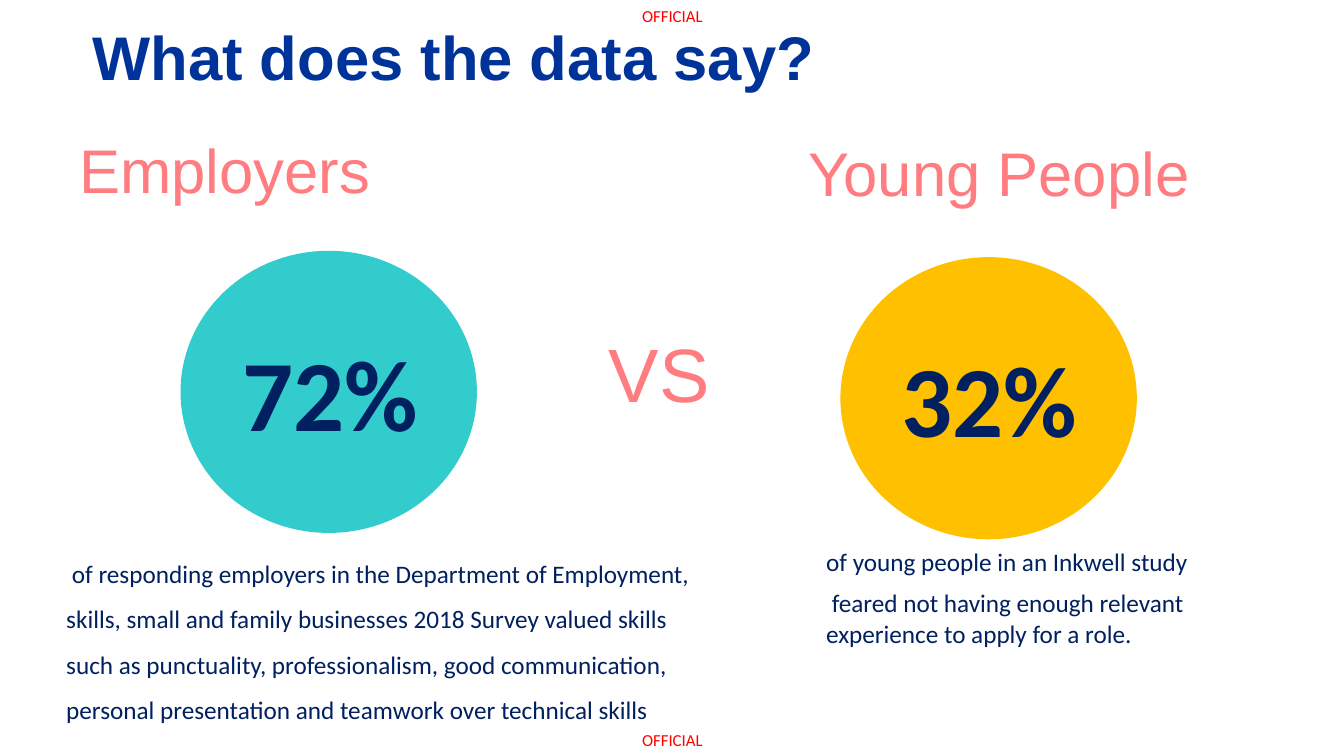
from pptx import Presentation
from pptx.dml.color import RGBColor
from pptx.enum.shapes import MSO_SHAPE
from pptx.enum.text import MSO_ANCHOR, MSO_AUTO_SIZE, PP_ALIGN
from pptx.util import Cm, Pt

# Content: places are left, top, width, height in cm
MARKING = "OFFICIAL"
MARKING_TOPS = [18.24, 0]
TEXTS = [
    (["What does the data say?"], (2.08, 0.56, 29.21, 1.96), "title"),
    (["Employers"], (1.75, 3.4, 8.43, 1.96), "heading"),
    (["Young People"], (20.12, 3.48, 11.43, 1.96), "heading"),
    (["VS"], (15.09, 8.36, 3.99, 2.34), "versus"),
    ([" of responding employers in the Department of Employment, skills, "
      "small and family businesses 2018 Survey valued skills such as "
      "punctuality, professionalism, good communication, personal "
      "presentation and teamwork over technical skills"],
     (1.42, 13.56, 16.94, 4.75), "open body"),
    (["of young people in an Inkwell study",
      " feared not having enough relevant experience to apply for a role."],
     (20.57, 13.64, 11.86, 2.84), "body"),
]
# Percentage, circle left, circle top, circle colour
CIRCLES = [("72%", 4.55, 6.32, "33CCCC"), ("32%", 21.18, 6.48, "FFC000")]

# Styles: font values, colour, paragraph values
NAVY, CORAL = "002060", "FF7C80"
STYLES = {
    "marking": ({"name": "Calibri", "size": Pt(12)}, "FF0000",
                {"alignment": PP_ALIGN.CENTER}),
    "title": ({"name": "Arial", "size": Pt(44), "bold": True}, "003399",
              {"line_spacing": 0.9}),
    "heading": ({"name": "Arial", "size": Pt(44)}, CORAL,
                {"line_spacing": 0.9}),
    "versus": ({"name": "Arial", "size": Pt(54)}, CORAL,
               {"line_spacing": 0.9}),
    "percent": ({"name": "Calibri", "size": Pt(72), "bold": True}, NAVY, {}),
    "open body": ({"name": "Calibri", "size": Pt(18)}, NAVY,
                  {"line_spacing": 1.5, "space_after": Pt(8)}),
    "body": ({"name": "Calibri", "size": Pt(18)}, NAVY,
             {"space_after": Pt(8)}),
}
MARKING_FRAME = {"margin_left": 0, "margin_right": 0, "margin_top": 0,
                 "margin_bottom": 0, "vertical_anchor": MSO_ANCHOR.MIDDLE,
                 "word_wrap": False}


def color(hex_value):
    return RGBColor.from_string(hex_value)


def set_values(target, values):
    for name, value in values.items():
        setattr(target, name, value)


def add_text(page, lines, place, style, frame_values=None):
    font_values, font_color, para_values = STYLES[style]
    box = page.shapes.add_textbox(*map(Cm, place))
    frame = box.text_frame
    set_values(frame, {"word_wrap": True,
                       "auto_size": MSO_AUTO_SIZE.SHAPE_TO_FIT_TEXT,
                       **(frame_values or {})})
    for index, line in enumerate(lines):
        para = frame.add_paragraph() if index else frame.paragraphs[0]
        set_values(para, para_values)
        span = para.add_run()
        span.text = line
        set_values(span.font, font_values)
        span.font.color.rgb = color(font_color)


def add_circle(page, percent, left, top, fill):
    circle = page.shapes.add_shape(MSO_SHAPE.OVAL,
                                   *map(Cm, (left, top, 7.47, 7.11)))
    circle.shadow.inherit = False
    circle.fill.solid()
    circle.fill.fore_color.rgb = color(fill)
    circle.line.fill.background()
    add_text(page, [percent], (left + 1.3, top + 1.88, 5.92, 3.33), "percent")


def main():
    deck = Presentation()
    deck.slide_width, deck.slide_height = Cm(33.87), Cm(19.05)
    page = deck.slides.add_slide(deck.slide_layouts[6])

    # Markings at the bottom and top edges
    for top in MARKING_TOPS:
        add_text(page, [MARKING], (15.75, top, 2.39, 0.81), "marking",
                 MARKING_FRAME)

    # Headings and findings
    for lines, place, style in TEXTS:
        add_text(page, lines, place, style)

    # Circles with their percentages
    for circle in CIRCLES:
        add_circle(page, *circle)

    deck.save("out.pptx")


if __name__ == "__main__":
    main()
